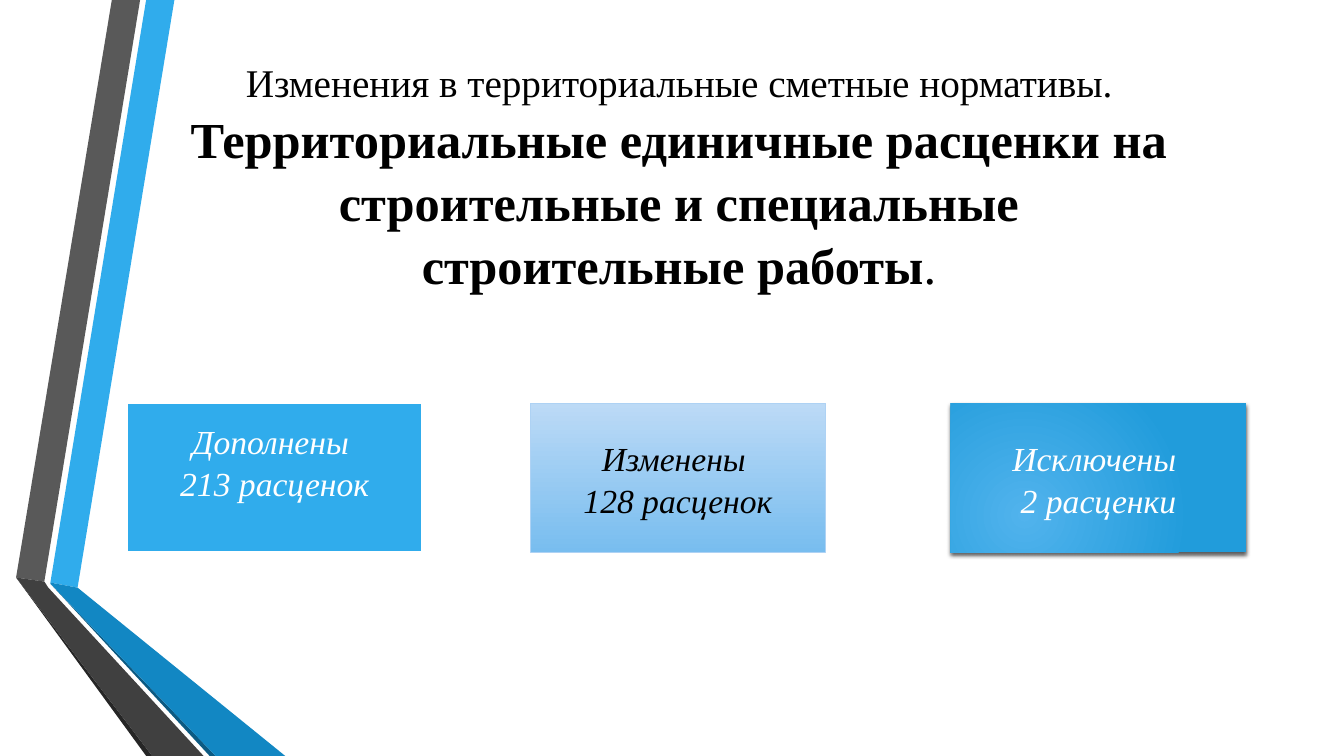
from dataclasses import dataclass

from lxml.etree import SubElement
from pptx import Presentation
from pptx.dml.color import RGBColor
from pptx.enum.shapes import MSO_SHAPE
from pptx.enum.text import MSO_ANCHOR, PP_ALIGN
from pptx.oxml.ns import qn
from pptx.util import Pt

PX = 9144  # 100 px to the inch


@dataclass(frozen=True)
class Theme:
    font: str = "Times New Roman"
    intro_size: int = 28
    title_size: int = 36
    card_size: int = 24
    white: str = "FFFFFF"
    black: str = "000000"
    blue: str = "30ACEC"
    blue_fold: str = "1287C3"
    blue_edge: str = "0C5A82"
    gray: str = "595959"
    gray_fold: str = "404040"
    gray_edge: str = "262626"
    pale: tuple = ("BCDAF6", "78BDEF")
    pale_line: str = "AED2F4"
    glow: tuple = ("51B3ED", "219CDB")


THEME = Theme()

RIBBONS = [
    (THEME.blue, [(50, 578), (77, 583), (173, 0), (145, 0)]),
    (THEME.gray, [(139, 0), (111, 0), (16, 573), (44, 577)]),
    (THEME.gray_edge, [(16, 573), (145, 750), (151, 750)]),
    (THEME.blue_edge, [(50, 579), (208, 750), (214, 750)]),
    (THEME.blue_fold, [(50, 579), (214, 750), (283, 750), (77, 583), (50, 578)]),
    (THEME.gray_fold, [(202, 750), (48, 583), (44, 577), (16, 573), (151, 750)]),
]


def rgb(color):
    return RGBColor.from_string(color)


def add_text(paragraph, text, *, size, color, bold=False, italic=False):
    paragraph.alignment = PP_ALIGN.CENTER
    run = paragraph.add_run()
    run.text = text
    font = run.font
    font.name, font.size = THEME.font, Pt(size)
    font.bold, font.italic = bold, italic
    font.color.rgb = rgb(color)


def add_ribbons(slide, left, top):
    for color, points in RIBBONS:
        corners = [(left + x, top + y) for x, y in points]
        builder = slide.shapes.build_freeform(*corners[0], scale=PX)
        builder.add_line_segments(corners[1:], close=True)
        ribbon = builder.convert_to_shape()
        ribbon.shadow.inherit = False
        ribbon.fill.solid()
        ribbon.fill.fore_color.rgb = rgb(color)
        ribbon.line.fill.background()


def add_heading(slide, left, top, width, height):
    heading = slide.shapes.add_textbox(left * PX, top * PX, width * PX, height * PX)
    frame = heading.text_frame
    frame.word_wrap = True
    frame.vertical_anchor = MSO_ANCHOR.BOTTOM
    paragraph = frame.paragraphs[0]
    paragraph.line_spacing = 1.04
    add_text(paragraph, "Изменения в территориальные сметные нормативы. ",
             size=THEME.intro_size, color=THEME.black)
    add_text(paragraph, "Территориальные единичные расценки на строительные "
             "и специальные строительные работы",
             size=THEME.title_size, color=THEME.black, bold=True)
    add_text(paragraph, ".", size=THEME.title_size, color=THEME.black)


def fill_gradient(shape, colors):
    shape.fill.gradient()
    shape.fill.gradient_angle = 270
    for stop, color, position in zip(shape.fill.gradient_stops, colors, (0, 1)):
        stop.color.rgb = rgb(color)
        stop.position = position


def make_radial(shape):
    """Turn the linear gradient of the shape into a circular one."""
    gradient = shape.element.spPr.find(qn("a:gradFill"))
    gradient.remove(gradient.find(qn("a:lin")))
    circle = SubElement(gradient, qn("a:path"), path="circle")
    SubElement(circle, qn("a:fillToRect"), l="50000", t="100000", r="100000", b="50000")


def add_drop_shadow(shape):
    effects = shape.element.spPr.find(qn("a:effectLst"))
    shadow = SubElement(effects, qn("a:outerShdw"), blurRad=str(Pt(3)),
                        dist=str(Pt(2)), dir="5400000", rotWithShape="0")
    color = SubElement(shadow, qn("a:srgbClr"), val=THEME.black)
    SubElement(color, qn("a:alpha"), val="64000")


def add_card(slide, left, top, width, height, lines, color):
    card = slide.shapes.add_shape(MSO_SHAPE.RECTANGLE, left * PX, top * PX,
                                  width * PX, height * PX)
    card.shadow.inherit = False
    frame = card.text_frame
    frame.word_wrap = True
    frame.vertical_anchor = MSO_ANCHOR.MIDDLE
    for index, line in enumerate(lines):
        paragraph = frame.add_paragraph() if index else frame.paragraphs[0]
        paragraph.line_spacing = 1.04
        add_text(paragraph, line, size=THEME.card_size, color=color, italic=True)
    return card


def outline(shape, color, width):
    shape.line.color.rgb = rgb(color)
    shape.line.width = Pt(width)


def add_cards(slide, lefts, top, width, height):
    added_left, changed_left, removed_left = lefts

    added = add_card(slide, added_left, top, width, height,
                     ("Дополнены ", "213 расценок"), THEME.white)
    added.fill.solid()
    added.fill.fore_color.rgb = rgb(THEME.blue)
    outline(added, THEME.white, 1.75)
    added.text_frame.margin_bottom = 37 * PX

    changed = add_card(slide, changed_left, top, width, height,
                       ("Изменены ", "128 расценок"), THEME.black)
    fill_gradient(changed, THEME.pale)
    outline(changed, THEME.pale_line, 0.75)

    removed = add_card(slide, removed_left, top, width, height,
                       ("Исключены ", "2 расценки"), THEME.white)
    fill_gradient(removed, THEME.glow)
    make_radial(removed)
    removed.line.fill.background()
    add_drop_shadow(removed)


def main():
    presentation = Presentation()
    presentation.slide_width = 1333 * PX
    presentation.slide_height = 750 * PX
    slide = presentation.slides.add_slide(presentation.slide_layouts[6])
    add_ribbons(slide, 0, 0)
    add_heading(slide, 175, 39, 997, 258)
    add_cards(slide, (126, 526, 943), 400, 293, 148)
    presentation.save("out.pptx")


if __name__ == "__main__":
    main()
